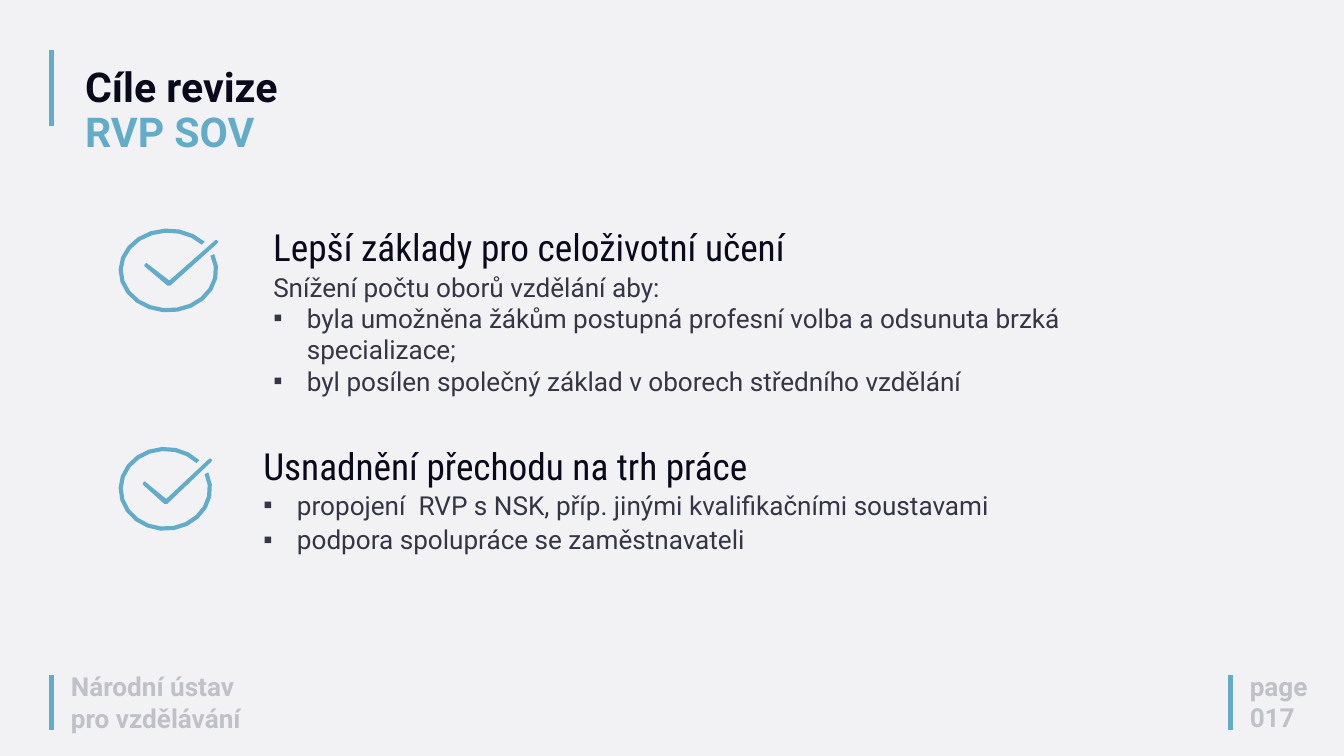
from math import cos, radians, sin

from lxml.etree import SubElement
from pptx import Presentation
from pptx.dml.color import RGBColor
from pptx.enum.shapes import MSO_CONNECTOR
from pptx.enum.text import MSO_ANCHOR, MSO_AUTO_SIZE, PP_ALIGN
from pptx.oxml.ns import qn
from pptx.util import Pt

BLUE = RGBColor(0x62, 0xAC, 0xC9)
INK = RGBColor(0x0A, 0x09, 0x1B)
SLATE = RGBColor(0x35, 0x35, 0x45)
PALE = RGBColor(0xC0, 0xC0, 0xC8)
BACK = RGBColor(0xF2, 0xF2, 0xF5)

TITLE = [("Cíle revize ", INK), ("RVP SOV", BLUE)]

# Each goal: top, icon width, text left, widths, intro lines, bullets
GOALS = [
    dict(top=244.8, icon=106.8, left=285.6, head_w=859.7, list_w=999.4,
         list_h=143.3, after=0,
         head="Lepší základy pro celoživotní učení",
         intro=["Snížení počtu oborů vzdělání aby:"],
         points=["byla umožněna žákům postupná profesní volba a odsunuta "
                 "brzká specializace;",
                 "byl posílen společný základ v oborech středního vzdělání"]),
    dict(top=478.8, icon=100.2, left=275, head_w=802.8, list_w=933.1,
         list_h=78.5, after=3,
         head="Usnadnění přechodu na trh práce",
         intro=[],
         points=["propojení  RVP s NSK, příp. jinými kvalifikačními soustavami",
                 "podpora spolupráce se zaměstnavateli"]),
]

# Bars: x, top, bottom
BARS = [(55.4, 54, 135.4), (55.4, 723.6, 781.9), (1318.3, 723.6, 781.9)]

# Corner texts: left, top, width, height, paragraphs
CORNERS = [
    (68.9, 715, 218.9, 74.9, ["Národní ústav pro vzdělávání"]),
    (1332, 714.6, 136.8, 74.9, ["page", "017"]),
]

# Check mark outline, as shares of the icon's width and height
TICK = [(.51, .62), (.29, .42), (.28, .41), (.26, .43), (.26, .45),
        (.49, .68), (.51, .68), (.52, .68), (.99, .18), (1, .16),
        (.99, .14), (.97, .14)]
ICON_X, ICON_H, RING = 127, 90, 4.5
ARC = range(-23, 318, 17)


def place(shape, left, top, width, height):
    shape.left, shape.top = Pt(left), Pt(top)
    shape.width, shape.height = Pt(width), Pt(height)


def style(run, size, color, font="Roboto", bold=False):
    run.font.size, run.font.name, run.font.bold = Pt(size), font, bold
    run.font.color.rgb = color


def write(shape, lines, points=(), after=0, **look):
    """Fill a shape with plain paragraphs, then bulleted ones."""
    frame = shape.text_frame
    frame.word_wrap = True
    frame.auto_size = MSO_AUTO_SIZE.NONE
    frame.vertical_anchor = MSO_ANCHOR.TOP
    for i, text in enumerate([*lines, *points]):
        para = frame.add_paragraph() if i else frame.paragraphs[0]
        para.alignment = PP_ALIGN.LEFT
        para.space_before, para.space_after = Pt(0), Pt(after)
        run = para.add_run()
        run.text = text
        style(run, **look)
        props = para._p.get_or_add_pPr()
        listed = i >= len(lines)
        props.set("marL", str(Pt(36 if listed else 0)))
        props.set("indent", str(Pt(-36 if listed else 0)))
        if listed:
            SubElement(props, qn("a:buChar")).set("char", "▪")
        else:
            SubElement(props, qn("a:buNone"))


def add_bar(shapes, x, top, bottom):
    bar = shapes.add_connector(MSO_CONNECTOR.STRAIGHT,
                               Pt(x), Pt(top), Pt(x), Pt(bottom))
    bar.line.color.rgb, bar.line.width = BLUE, Pt(5)
    SubElement(bar._element.spPr, qn("a:effectLst"))


def add_icon(shapes, top, width):
    """Draw a check mark breaking through an open ring."""
    def arc(inset, angles):
        rx, ry = width / 2 - inset, ICON_H / 2 - inset
        return [(Pt(ICON_X + width / 2 + rx * cos(radians(a))),
                 Pt(top + ICON_H / 2 + ry * sin(radians(a))))
                for a in angles]

    ring = arc(0, ARC) + arc(RING, reversed(ARC))
    tick = [(Pt(ICON_X + x * width), Pt(top + y * ICON_H)) for x, y in TICK]
    pen = shapes.build_freeform(*tick[0], scale=1)
    pen.add_line_segments(tick[1:], close=True)
    pen.move_to(*ring[0])
    pen.add_line_segments(ring[1:], close=True)
    icon = pen.convert_to_shape()
    icon.fill.solid()
    icon.fill.fore_color.rgb = BLUE
    icon.line.fill.background()
    icon.shadow.inherit = False


def add_title(shape):
    place(shape, 84, 68.6, 1092.2, 103)
    frame = shape.text_frame
    frame.auto_size = MSO_AUTO_SIZE.NONE
    frame.vertical_anchor = MSO_ANCHOR.TOP
    para = frame.paragraphs[0]
    para.alignment, para.line_spacing = PP_ALIGN.LEFT, 0.9
    for i, (text, color) in enumerate(TITLE):
        if i:
            para.add_line_break()
        run = para.add_run()
        run.text = text
        style(run, 44, color, bold=True)


def main():
    deck = Presentation()
    deck.slide_width, deck.slide_height = Pt(1440), Pt(810)
    slide = deck.slides.add_slide(deck.slide_layouts.get_by_name("Two Content"))
    slide.background.fill.solid()
    slide.background.fill.fore_color.rgb = BACK
    shapes = slide.shapes
    title, *bodies = slide.placeholders

    add_title(title)
    for bar in BARS:
        add_bar(shapes, *bar)
    for *box, lines in CORNERS:
        note = shapes.add_textbox(*map(Pt, box))
        write(note, lines, size=28, color=PALE, bold=True)
    for goal, body in zip(GOALS, bodies):
        top, left = goal["top"], goal["left"]
        add_icon(shapes, top, goal["icon"])
        head = shapes.add_textbox(Pt(left), Pt(top - 7.9),
                                  Pt(goal["head_w"]), Pt(55.4))
        write(head, [goal["head"]], size=40, color=INK, font="Roboto Condensed")
        place(body, left, top + 41.8, goal["list_w"], goal["list_h"])
        write(body, goal["intro"], goal["points"], goal["after"],
              size=28, color=SLATE)
    deck.save("out.pptx")


if __name__ == "__main__":
    main()
